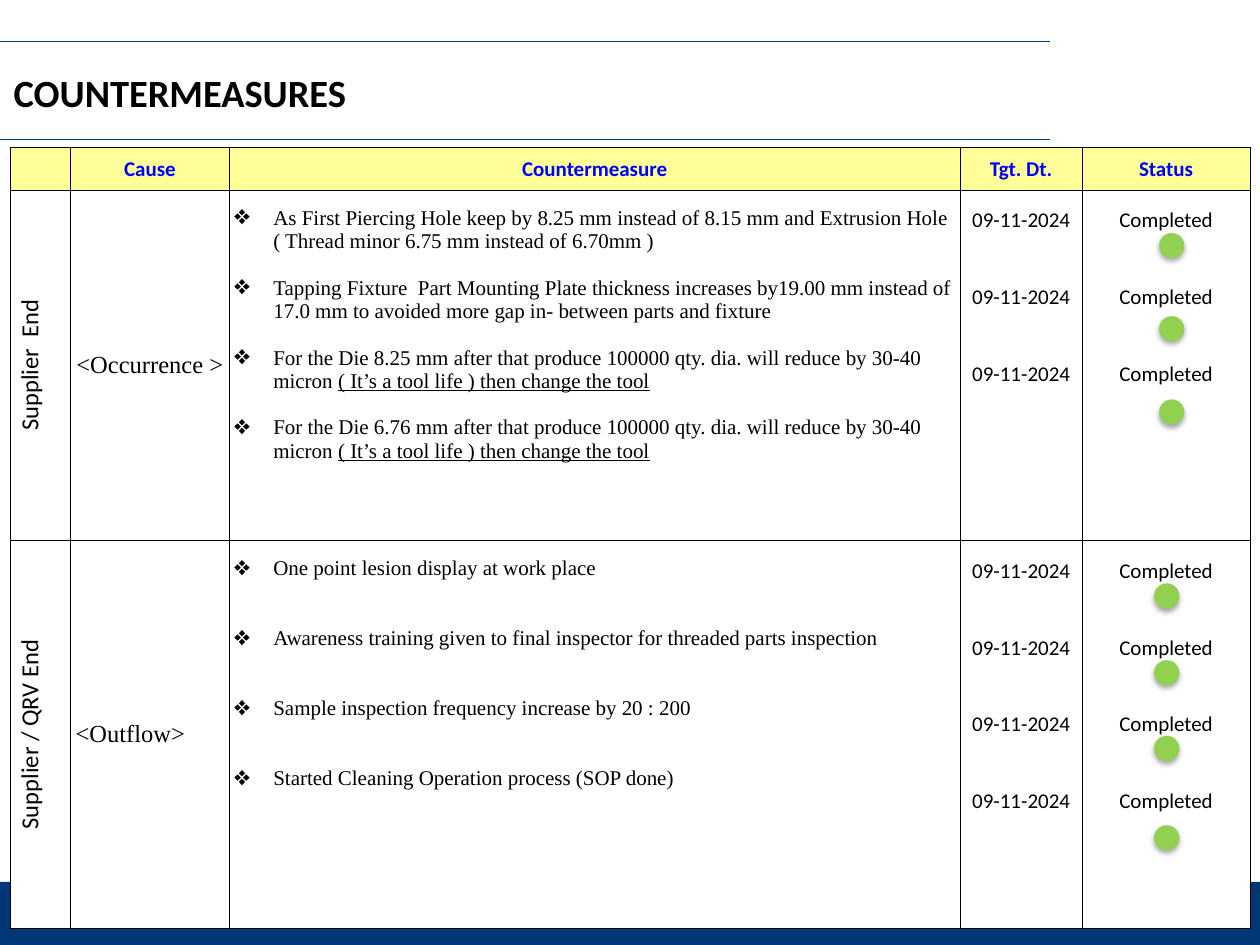
from lxml import etree
from pptx import Presentation
from pptx.dml.color import RGBColor
from pptx.enum.shapes import MSO_CONNECTOR, MSO_SHAPE
from pptx.enum.text import MSO_ANCHOR, PP_ALIGN
from pptx.oxml.ns import qn
from pptx.util import Inches, Pt

LEFT, CENTER, JUSTIFY = PP_ALIGN.LEFT, PP_ALIGN.CENTER, PP_ALIGN.JUSTIFY
TOP, MIDDLE = MSO_ANCHOR.TOP, MSO_ANCHOR.MIDDLE
SANS, SERIF = "Calibri", "Times New Roman"
NAVY, BLACK, WHITE = "003777", "000000", "FFFFFF"
YELLOW, BLUE, GREEN = "FFFF99", "0000FF", "92D050"

TITLE = "COUNTERMEASURES"
HEADERS = ["", "Cause", "Countermeasure", "Tgt. Dt.", "Status"]
DATE, STATUS = "09-11-2024", "Completed"
TOOL_LIFE = "( It’s a tool life ) then change the tool"

# A countermeasure is (plain text, underlined text).
SECTIONS = [
    {
        "owner": "Supplier  End",
        "cause": "<Occurrence >",
        "cause_align": CENTER,
        "measures": [
            ("As First Piercing Hole keep by 8.25 mm instead of 8.15 mm and "
             "Extrusion Hole ( Thread minor 6.75 mm instead of 6.70mm )", ""),
            ("Tapping Fixture  Part Mounting Plate thickness increases by19.00 mm "
             "instead of 17.0 mm to avoided more gap in- between parts and fixture", ""),
            ("For the Die 8.25 mm after that produce 100000 qty. dia. will reduce "
             "by 30-40 micron ", TOOL_LIFE),
            ("For the Die 6.76 mm after that produce 100000 qty. dia. will reduce "
             "by 30-40 micron ", TOOL_LIFE),
        ],
        "measure_format": {"gap": 13.3, "top": 0.13},
        "dot_left": 9.2,
        "dot_tops": [1.85, 2.51, 3.17],
    },
    {
        "owner": "Supplier / QRV End",
        "cause": "<Outflow>",
        "cause_align": JUSTIFY,
        "measures": [
            ("One point lesion display at work place", ""),
            ("Awareness training given to final inspector for threaded parts inspection", ""),
            ("Sample inspection frequency increase by 20 : 200", ""),
            ("Started Cleaning Operation process (SOP done)", ""),
        ],
        "measure_format": {"gap": 20, "spacing": 1.5},
        "dot_left": 9.16,
        "dot_tops": [4.63, 5.24, 5.84, 6.55],
    },
]

COLUMN_WIDTHS = [0.48, 1.26, 5.8, 0.97, 1.33]
ROW_HEIGHTS = [0.34, 2.78, 3.08]
TABLE_LEFT, TABLE_TOP = 0.08, 1.17
RULE_TOPS, RULE_LENGTH = [0.33, 1.11], 8.33
DOT_SIZE = 0.2
CELL_MARGIN = 0.04
INDENT = 0.31


def rgb(color):
    return RGBColor.from_string(color)


def add_element(parent, tag, **attributes):
    return etree.SubElement(parent, qn(tag), attributes)


def write_text(frame, paragraphs, size=12, font=SANS, color=BLACK, bold=False,
               align=LEFT, spacing=None, gap=0, bullet=None):
    """Fill frame; each paragraph is (plain text, underlined text)."""
    frame.word_wrap = True
    for index, parts in enumerate(paragraphs):
        paragraph = frame.paragraphs[0] if index == 0 else frame.add_paragraph()
        paragraph.alignment = align
        if spacing:
            paragraph.line_spacing = spacing
        if index and gap:
            paragraph.space_before = Pt(gap)
        if bullet:
            properties = paragraph._p.get_or_add_pPr()
            properties.set("marL", str(Inches(INDENT)))
            properties.set("indent", str(-Inches(INDENT)))
            add_element(properties, "a:buSzPct", val="130000")
            add_element(properties, "a:buChar", char=bullet)
        for text, underlined in zip(parts, (False, True)):
            if not text:
                continue
            run = paragraph.add_run()
            run.text = text
            run.font.size = Pt(size)
            run.font.name = font
            run.font.bold = bold
            run.font.underline = underlined
            run.font.color.rgb = rgb(color)
        # The end mark sets the line height of an empty cell.
        add_element(paragraph._p, "a:endParaRPr", sz=str(size * 100))


def fill_cell(cell, paragraphs, fill=WHITE, anchor=MIDDLE, top=CELL_MARGIN,
              vertical=False, **text_format):
    cell.margin_left = cell.margin_right = cell.margin_bottom = Inches(CELL_MARGIN)
    cell.margin_top = Inches(top)
    cell.vertical_anchor = anchor
    properties = cell._tc.get_or_add_tcPr()
    if vertical:
        properties.set("vert", "vert270")
    for side in ("a:lnL", "a:lnR", "a:lnT", "a:lnB"):
        border = add_element(properties, side, w=str(Pt(0.25)))
        add_element(add_element(border, "a:solidFill"), "a:srgbClr", val=BLACK)
    cell.fill.solid()
    cell.fill.fore_color.rgb = rgb(fill)
    write_text(cell.text_frame, paragraphs, **text_format)


def add_filled_shape(shapes, kind, left, top, width, height, color):
    shape = shapes.add_shape(kind, Inches(left), Inches(top), Inches(width), Inches(height))
    shape.shadow.inherit = False
    shape.fill.solid()
    shape.fill.fore_color.rgb = rgb(color)
    shape.line.fill.background()
    return shape


def add_rule(shapes, top):
    rule = shapes.add_connector(MSO_CONNECTOR.STRAIGHT, 0, Inches(top),
                                Inches(RULE_LENGTH), Inches(top))
    rule.line.color.rgb = rgb(NAVY)
    rule.line.width = Pt(0.75)
    add_element(rule._element.spPr, "a:effectLst")


def add_status_dot(shapes, left, top):
    dot = add_filled_shape(shapes, MSO_SHAPE.OVAL, left, top, DOT_SIZE, DOT_SIZE, GREEN)
    effects = dot._element.spPr.find(qn("a:effectLst"))
    shadow = add_element(effects, "a:outerShdw", blurRad=str(Pt(3.1)), dist=str(Pt(1.8)),
                         dir="5400000", rotWithShape="0")
    shade = add_element(shadow, "a:srgbClr", val=BLACK)
    add_element(shade, "a:alpha", val="35000")


def add_countermeasure_table(shapes):
    table = shapes.add_table(len(ROW_HEIGHTS), len(COLUMN_WIDTHS),
                             Inches(TABLE_LEFT), Inches(TABLE_TOP),
                             Inches(sum(COLUMN_WIDTHS)), Inches(sum(ROW_HEIGHTS))).table
    for column, width in zip(table.columns, COLUMN_WIDTHS):
        column.width = Inches(width)
    for row, height in zip(table.rows, ROW_HEIGHTS):
        row.height = Inches(height)

    for cell, header in zip(table.rows[0].cells, HEADERS):
        fill_cell(cell, [(header,)], fill=YELLOW, color=BLUE, bold=True, align=CENTER)

    for row, section in enumerate(SECTIONS, start=1):
        owner, cause, measures, date, status = table.rows[row].cells
        fill_cell(owner, [(section["owner"],)], vertical=True, size=14, align=CENTER)
        fill_cell(cause, [(section["cause"],)], size=14, font=SERIF,
                  align=section["cause_align"])
        fill_cell(measures, section["measures"], anchor=TOP, font=SERIF, bullet="❖",
                  **section["measure_format"])
        for cell, text in ((date, DATE), (status, STATUS)):
            fill_cell(cell, [(text,)] * len(section["dot_tops"]), anchor=TOP,
                      align=CENTER, spacing=1.5, gap=21.9)


def main():
    deck = Presentation()
    deck.slide_width, deck.slide_height = Inches(10), Inches(7.5)
    shapes = deck.slides.add_slide(deck.slide_layouts[6]).shapes

    add_filled_shape(shapes, MSO_SHAPE.RECTANGLE, 0, 7, 10, 0.5, NAVY)
    for top in RULE_TOPS:
        add_rule(shapes, top)
    title = shapes.add_textbox(Inches(0.01), Inches(0.5), Inches(3.91), Inches(0.42))
    write_text(title.text_frame, [(TITLE,)], size=22, bold=True)

    add_countermeasure_table(shapes)
    for section in SECTIONS:
        for top in section["dot_tops"]:
            add_status_dot(shapes, section["dot_left"], top)

    deck.save("out.pptx")


if __name__ == "__main__":
    main()
